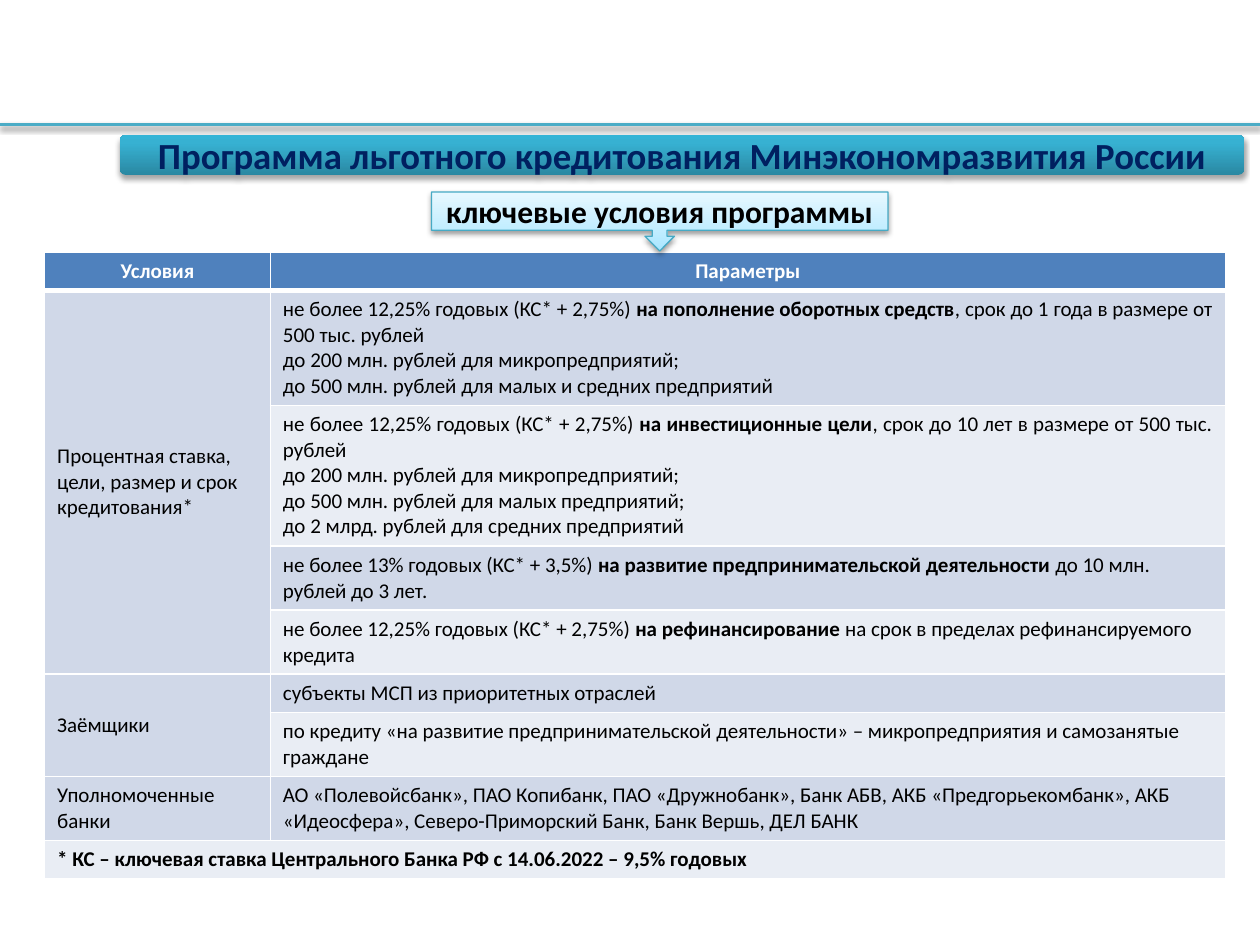
import pptx
import pptx.dml.color
import pptx.enum.shapes
import pptx.enum.text
import pptx.oxml
import pptx.oxml.ns
import pptx.util

Cm = pptx.util.Cm
Pt = pptx.util.Pt
SHAPE = pptx.enum.shapes.MSO_SHAPE
ALIGN = pptx.enum.text.PP_ALIGN
MIDDLE = pptx.enum.text.MSO_ANCHOR.MIDDLE

TITLE = "Программа льготного кредитования Минэкономразвития России"
SUBTITLE = "ключевые условия программы"
HEADER = ["Условия", "Параметры"]
WORKING = "не более 12,25% годовых (КС* + 2,75%) "
MICRO = "до 200 млн. рублей для микропредприятий;"

# Each group: condition, then its parameters; odd runs of a paragraph are bold.
GROUPS = [
    ("Процентная ставка, цели, размер и срок кредитования*", [
        [[WORKING, "на пополнение оборотных средств",
          ", срок до 1 года в размере от 500 тыс. рублей"],
         [MICRO],
         ["до 500 млн. рублей для малых и средних предприятий"]],
        [[WORKING, "на инвестиционные цели",
          ", срок до 10 лет в размере от 500 тыс. рублей"],
         [MICRO],
         ["до 500 млн. рублей для малых предприятий;"],
         ["до 2 млрд. рублей для средних предприятий"]],
        [["не более 13% годовых (КС* + 3,5%) ",
          "на развитие предпринимательской деятельности ",
          "до 10 млн. рублей до 3 лет."]],
        [[WORKING, "на рефинансирование ",
          "на срок в пределах рефинансируемого кредита"]],
    ]),
    ("Заёмщики", [
        [["субъекты МСП из приоритетных отраслей"]],
        [["по кредиту «на развитие предпринимательской деятельности» – "
          "микропредприятия и самозанятые граждане"]],
    ]),
    ("Уполномоченные банки", [
        [["АО «Полевойсбанк», ПАО Копибанк, ПАО «Дружнобанк», Банк АБВ, "
          "АКБ «Предгорьекомбанк», АКБ «Идеосфера», Северо-Приморский Банк, "
          "Банк Вершь, ДЕЛ БАНК"]],
    ]),
]
FOOTNOTE = "* КС – ключевая ставка Центрального Банка РФ с 14.06.2022 – 9,5% годовых"

COLUMNS = [4.55, 19.25]
ROWS = [0.75, 2.32, 2.84, 1.29, 1.29, 0.77, 1.29, 1.29, 0.77]
HEAD_FILL, DARK_BAND, LIGHT_BAND = "4F81BD", "D0D8E8", "E9EDF4"


def rgb(value):
    return pptx.dml.color.RGBColor.from_string(value)


def element(tag, attributes, content):
    return pptx.oxml.parse_xml(
        f"<a:{tag} {pptx.oxml.ns.nsdecls('a')} {attributes}>{content}</a:{tag}>")


def add_shadow(s, alpha, distance):
    s._element.spPr.append(element(
        "effectLst", "",
        f'<a:outerShdw blurRad="{Pt(3.1)}" dist="{Pt(distance)}" '
        f'dir="5400000" rotWithShape="0"><a:srgbClr val="000000">'
        f'<a:alpha val="{alpha * 1000}"/></a:srgbClr></a:outerShdw>'))


def fill_upwards(s, stops):
    """Gradient running from the bottom edge to the top."""
    marks = "".join(f'<a:gs pos="{pos * 1000}"><a:srgbClr val="{color}"/></a:gs>'
                    for pos, color in stops)
    s._element.spPr.insert(2, element(
        "gradFill", 'rotWithShape="1"',
        f'<a:gsLst>{marks}</a:gsLst><a:lin ang="16200000" scaled="0"/>'))


def write(tf, paragraphs, size, color, align, bold=False):
    for i, runs in enumerate(paragraphs):
        p = tf.paragraphs[0] if i == 0 else tf.add_paragraph()
        p.alignment = align
        p.font.name, p.font.size = "Calibri", Pt(size)
        p.font.color.rgb = rgb(color)
        for j, text in enumerate(runs):
            r = p.add_run()
            r.text = text
            r.font.bold = bold or j % 2 == 1


def add_banner(slide, kind, box, stops, text, size, color):
    s = slide.shapes.add_shape(kind, *map(Cm, box))
    fill_upwards(s, stops)
    s.line.fill.background()
    tf = s.text_frame
    tf.word_wrap = True
    tf.vertical_anchor = MIDDLE
    write(tf, [[text]], size, color, ALIGN.CENTER, bold=True)
    return s


def style_cell(cell, fill, top=1, bottom=1):
    tcPr = cell._tc.get_or_add_tcPr()
    for side, width in (("L", 1), ("R", 1), ("T", top), ("B", bottom)):
        tcPr.append(element(
            f"ln{side}", f'w="{Pt(width)}"',
            '<a:solidFill><a:srgbClr val="FFFFFF"/></a:solidFill>'))
    cell.fill.solid()
    cell.fill.fore_color.rgb = rgb(fill)


def add_conditions(slide):
    table = slide.shapes.add_table(len(ROWS), len(COLUMNS), Cm(0.9), Cm(5.08),
                                   Cm(sum(COLUMNS)), Cm(sum(ROWS))).table
    for column, width in zip(table.columns, COLUMNS):
        column.width = Cm(width)
    for row, height in zip(table.rows, ROWS):
        row.height = Cm(height)

    for c, text in enumerate(HEADER):
        style_cell(table.cell(0, c), HEAD_FILL, bottom=3)
        write(table.cell(0, c).text_frame, [[text]], 12, "FFFFFF", ALIGN.CENTER, True)

    row = 1
    for condition, parameters in GROUPS:
        first = table.cell(row, 0)
        if len(parameters) > 1:
            first.merge(table.cell(row + len(parameters) - 1, 0))
        first.vertical_anchor = MIDDLE
        write(first.text_frame, [[condition]], 12, "000000", ALIGN.LEFT)
        for paragraphs in parameters:
            top = 3 if row == 1 else 1
            style_cell(table.cell(row, 0), DARK_BAND, top)
            style_cell(table.cell(row, 1), DARK_BAND if row % 2 else LIGHT_BAND, top)
            align = ALIGN.JUSTIFY if len(paragraphs) > 1 else ALIGN.LEFT
            write(table.cell(row, 1).text_frame, paragraphs, 12, "000000", align)
            row += 1

    note = table.cell(row, 0)
    note.merge(table.cell(row, 1))
    note.vertical_anchor = MIDDLE
    for c in range(len(COLUMNS)):
        style_cell(table.cell(row, c), LIGHT_BAND)
    write(note.text_frame, [[FOOTNOTE]], 12, "000000", ALIGN.LEFT, True)


def main():
    prs = pptx.Presentation()
    prs.slide_width, prs.slide_height = Cm(25.4), Cm(19.05)
    slide = prs.slides.add_slide(prs.slide_layouts[6])

    rule = slide.shapes.add_connector(pptx.enum.shapes.MSO_CONNECTOR.STRAIGHT,
                                      0, Cm(2.51), prs.slide_width, Cm(2.51))
    rule.line.color.rgb = rgb("4BACC6")
    rule.line.width = Pt(2)
    add_shadow(rule, 38, 1.6)

    title = add_banner(slide, SHAPE.ROUNDED_RECTANGLE, (2.41, 2.72, 22.68, 0.81),
                       [(0, "2A88A2"), (80, "37B1D2"), (100, "34B4D6")],
                       TITLE, 21, "002060")
    add_shadow(title, 35, 1.8)

    add_conditions(slide)

    callout = add_banner(slide, SHAPE.DOWN_ARROW_CALLOUT, (8.7, 3.87, 9.2, 1.19),
                         [(0, "A7E6FF"), (35, "C1EDFF"), (100, "E7F8FF")],
                         SUBTITLE, 18, "000000")
    callout.line.color.rgb = rgb("46AAC5")
    callout.line.width = Pt(0.75)
    add_shadow(callout, 38, 1.6)

    prs.save("out.pptx")


if __name__ == "__main__":
    main()
